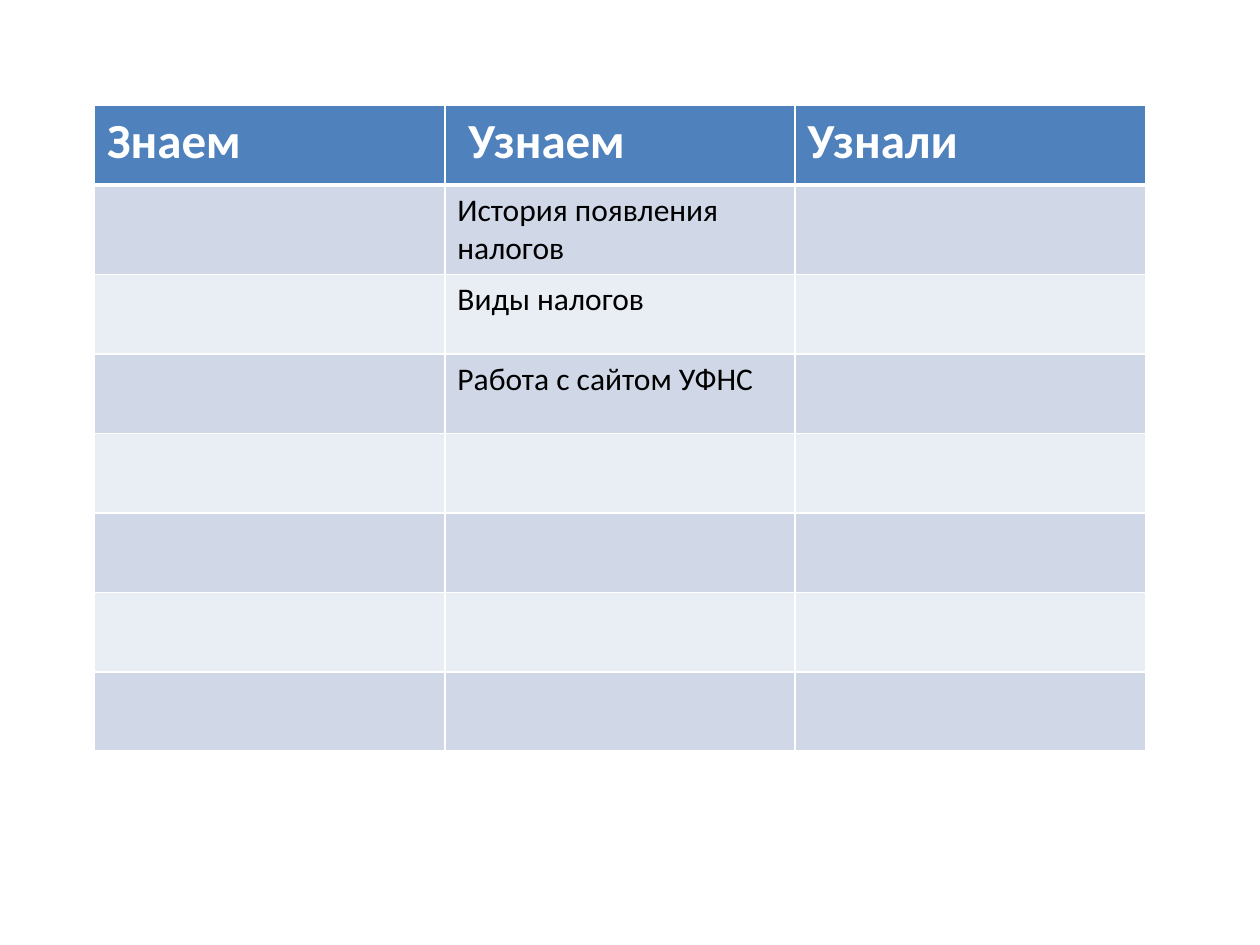
import pptx
import pptx.util
import pptx.dml.color
import pptx.oxml
import pptx.oxml.ns

Pt = pptx.util.Pt
RGBColor = pptx.dml.color.RGBColor

WHITE = RGBColor(0xFF, 0xFF, 0xFF)
BLACK = RGBColor(0x00, 0x00, 0x00)
HEADER_BLUE = RGBColor(0x4F, 0x81, 0xBD)
BAND_DARK = RGBColor(0xD0, 0xD8, 0xE8)
BAND_LIGHT = RGBColor(0xE9, 0xED, 0xF4)

FONT = "Calibri"
HEADINGS = ["Знаем", " Узнаем", "Узнали"]
TOPICS = ["История появления налогов", "Виды налогов", "Работа с сайтом УФНС"]
TOPIC_COLUMN = 1
ROW_COUNT = 8
COLUMN_WIDTH = 200.2
ROW_HEIGHT = 45.4


def add_border(cell, side, width):
    """Draw one white cell edge; side is L, R, T or B."""
    line = pptx.oxml.parse_xml(
        f'<a:ln{side} {pptx.oxml.ns.nsdecls("a")} w="{Pt(width)}">'
        f'<a:solidFill><a:srgbClr val="{WHITE}"/></a:solidFill></a:ln{side}>'
    )
    cell._tc.get_or_add_tcPr().append(line)


def format_cell(cell, row_index):
    """Set the edges first, since the fill must follow them in the XML."""
    top = 3 if row_index == 1 else 1
    bottom = 3 if row_index == 0 else 1
    for side, width in (("L", 1), ("R", 1), ("T", top), ("B", bottom)):
        add_border(cell, side, width)
    cell.fill.solid()
    if row_index == 0:
        cell.fill.fore_color.rgb = HEADER_BLUE
    else:
        cell.fill.fore_color.rgb = BAND_DARK if row_index % 2 else BAND_LIGHT


def write_cell(cell, text, size, color, bold):
    run = cell.text_frame.paragraphs[0].add_run()
    run.text = text
    run.font.name = FONT
    run.font.size = Pt(size)
    run.font.bold = bold
    run.font.color.rgb = color


def add_learning_table(slide):
    column_count = len(HEADINGS)
    frame = slide.shapes.add_table(
        ROW_COUNT, column_count, Pt(54), Pt(60.4),
        Pt(COLUMN_WIDTH * column_count), Pt(ROW_HEIGHT * ROW_COUNT),
    )
    table = frame.table
    for column in table.columns:
        column.width = Pt(COLUMN_WIDTH)
    for row_index, row in enumerate(table.rows):
        row.height = Pt(ROW_HEIGHT)
        for cell in row.cells:
            format_cell(cell, row_index)
    for column_index, heading in enumerate(HEADINGS):
        write_cell(table.cell(0, column_index), heading, 28, WHITE, True)
    for row_index, topic in enumerate(TOPICS, start=1):
        write_cell(table.cell(row_index, TOPIC_COLUMN), topic, 18, BLACK, False)


def main():
    deck = pptx.Presentation()
    deck.slide_width = Pt(720)
    deck.slide_height = Pt(540)
    slide = deck.slides.add_slide(deck.slide_layouts[6])
    add_learning_table(slide)
    deck.save("out.pptx")


if __name__ == "__main__":
    main()
